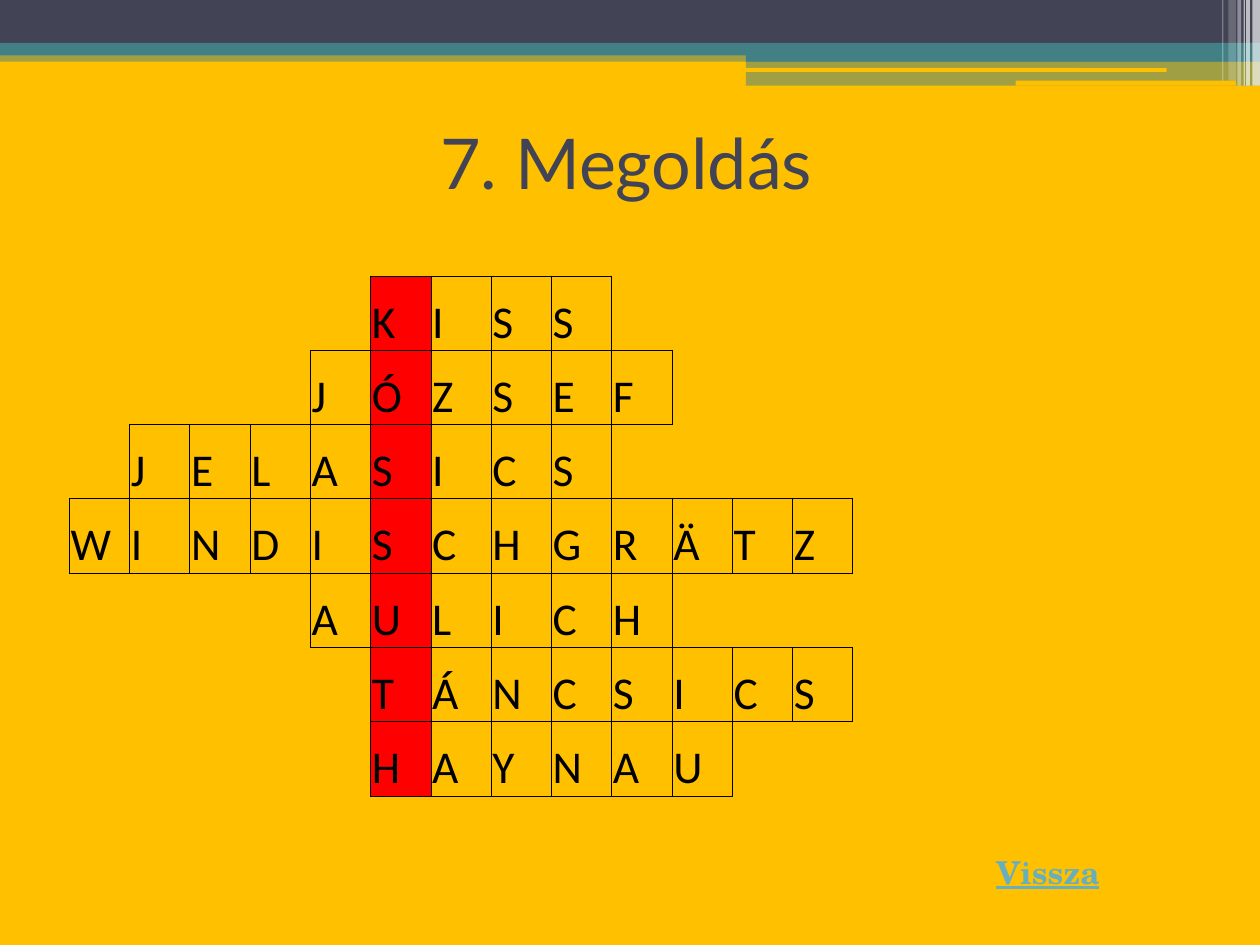
from dataclasses import dataclass
from typing import Optional

from lxml import etree
from pptx import Presentation
from pptx import util as u
from pptx.dml.color import RGBColor
from pptx.enum import shapes, text
from pptx.oxml import ns


@dataclass(frozen=True)
class Theme:
    background: str = "FFC000"
    dark: str = "424456"
    teal: str = "438086"
    white: str = "FFFFFF"
    black: str = "000000"
    solution: str = "FF0000"
    link: str = "67AFBD"
    title_font: str = "Lato"
    letter_font: str = "Calibri"
    link_font: str = "TeX Gyre Schola"
    title_size: int = 40
    letter_size: int = 26
    link_size: int = 18
    grid_line: float = 0.5
    link_outline: float = 1.4


THEME = Theme()


@dataclass(frozen=True)
class Bar:
    left: float
    top: float
    width: float
    height: float
    color: str
    opacity: int = 100
    rounded: bool = False


@dataclass(frozen=True)
class Word:
    start: int
    letters: str


@dataclass(frozen=True)
class Style:
    font: str
    size: int
    color: str
    bold: Optional[bool] = None
    underline: Optional[bool] = None


BARS = [
    Bar(0, 0.4, 10, 0.09, THEME.teal, 50),
    Bar(0, 0, 10, 0.34, THEME.dark),
    Bar(0, 0.34, 10, 0.1, THEME.teal),
    Bar(5.92, 0.39, 4.08, 0.1, THEME.teal),
    Bar(5.92, 0.48, 4.08, 0.2, THEME.teal, 50),
    Bar(5.91, 0.54, 3.35, 0.03, THEME.background, rounded=True),
    Bar(8.06, 0.64, 1.75, 0.04, THEME.background, rounded=True),
    Bar(9.94, 0, 0.06, 0.68, THEME.white, 65),
    Bar(9.89, 0, 0.03, 0.68, THEME.white, 65),
    Bar(9.87, 0, 0.01, 0.68, THEME.white, 60),
    Bar(9.82, 0, 0.03, 0.68, THEME.white, 40),
    Bar(9.75, 0, 0.06, 0.64, THEME.white, 20),
    Bar(9.7, 0, 0.01, 0.64, THEME.white, 30),
]

WORDS = [
    Word(5, "KISS"),
    Word(4, "JÓZSEF"),
    Word(1, "JELASICS"),
    Word(0, "WINDISCHGRÄTZ"),
    Word(4, "AULICH"),
    Word(5, "TÁNCSICS"),
    Word(5, "HAYNAU"),
]
COLUMNS = 13
SOLUTION_COLUMN = 5
SIDES = {"a:lnL": (0, -1), "a:lnR": (0, 1), "a:lnT": (-1, 0), "a:lnB": (1, 0)}

TITLE_STYLE = Style(THEME.title_font, THEME.title_size, THEME.dark)
LETTER_STYLE = Style(THEME.letter_font, THEME.letter_size, THEME.black)
LINK_STYLE = Style(THEME.link_font, THEME.link_size, THEME.link, True, True)


def add_bar(slide, bar: Bar) -> None:
    kind = shapes.MSO_SHAPE.ROUNDED_RECTANGLE if bar.rounded else shapes.MSO_SHAPE.RECTANGLE
    shape = slide.shapes.add_shape(
        kind, u.Inches(bar.left), u.Inches(bar.top), u.Inches(bar.width), u.Inches(bar.height)
    )
    shape.shadow.inherit = False
    shape.line.fill.background()
    shape.fill.solid()
    shape.fill.fore_color.rgb = RGBColor.from_string(bar.color)
    if bar.opacity < 100:
        color = shape.element.spPr.find(ns.qn("a:solidFill"))[0]
        etree.SubElement(color, ns.qn("a:alpha"), val=str(bar.opacity * 1000))


def add_run(paragraph, wording: str, style: Style):
    run = paragraph.add_run()
    run.text = wording
    run.font.name = style.font
    run.font.size = u.Pt(style.size)
    run.font.bold = style.bold
    run.font.underline = style.underline
    run.font.color.rgb = RGBColor.from_string(style.color)
    return run


def make_line(tag: str, width: float, color: Optional[str]):
    line = etree.Element(ns.qn(tag), w=str(u.Pt(width)))
    if color is None:
        etree.SubElement(line, ns.qn("a:noFill"))
    else:
        fill = etree.SubElement(line, ns.qn("a:solidFill"))
        etree.SubElement(fill, ns.qn("a:srgbClr"), val=color)
    return line


def add_title(slide) -> None:
    box = slide.shapes.add_textbox(u.Inches(0.47), u.Inches(0.7), u.Inches(9), u.Inches(1.17))
    frame = box.text_frame
    frame.word_wrap = True
    frame.vertical_anchor = text.MSO_ANCHOR.MIDDLE
    paragraph = frame.paragraphs[0]
    paragraph.alignment = text.PP_ALIGN.CENTER
    add_run(paragraph, "7. Megoldás", TITLE_STYLE)


def add_back_label(slide) -> None:
    box = slide.shapes.add_textbox(u.Inches(7.81), u.Inches(6.72), u.Inches(1.03), u.Inches(0.4))
    frame = box.text_frame
    frame.word_wrap = False
    frame.auto_size = text.MSO_AUTO_SIZE.SHAPE_TO_FIT_TEXT
    run = add_run(frame.paragraphs[0], "Vissza", LINK_STYLE)
    outline = make_line("a:ln", THEME.link_outline, THEME.white)
    run.font.fill
    run._r.get_or_add_rPr().insert(0, outline)


def letter_at(row: int, column: int) -> str:
    if not 0 <= row < len(WORDS):
        return ""
    word = WORDS[row]
    index = column - word.start
    return word.letters[index] if 0 <= index < len(word.letters) else ""


def fill_cell(cell, row: int, column: int) -> None:
    letter = letter_at(row, column)
    if letter and column == SOLUTION_COLUMN:
        cell.fill.solid()
        cell.fill.fore_color.rgb = RGBColor.from_string(THEME.solution)
    else:
        cell.fill.background()
    if letter:
        cell.vertical_anchor = text.MSO_ANCHOR.BOTTOM
        cell.margin_left = cell.margin_right = cell.margin_top = u.Inches(0.01)
        cell.margin_bottom = 0
        add_run(cell.text_frame.paragraphs[0], letter, LETTER_STYLE)
    properties = cell._tc.get_or_add_tcPr()
    for position, (tag, (down, across)) in enumerate(SIDES.items()):
        bordered = letter or letter_at(row + down, column + across)
        line = make_line(tag, THEME.grid_line, THEME.black if bordered else None)
        properties.insert(position, line)


def add_crossword(slide) -> None:
    table = slide.shapes.add_table(
        len(WORDS), COLUMNS, u.Inches(0.55), u.Inches(2.19), u.Inches(6.22), u.Inches(4.13)
    ).table
    table.first_row = table.horz_banding = False
    for column in table.columns:
        column.width = u.Inches(6.22 / COLUMNS)
    for row in range(len(WORDS)):
        table.rows[row].height = u.Inches(4.13 / len(WORDS))
        for column in range(COLUMNS):
            fill_cell(table.cell(row, column), row, column)


def main() -> None:
    presentation = Presentation()
    presentation.slide_width = u.Inches(10)
    presentation.slide_height = u.Inches(7.5)
    slide = presentation.slides.add_slide(presentation.slide_layouts[6])
    slide.background.fill.solid()
    slide.background.fill.fore_color.rgb = RGBColor.from_string(THEME.background)
    for bar in BARS:
        add_bar(slide, bar)
    add_title(slide)
    add_back_label(slide)
    add_crossword(slide)
    presentation.save("out.pptx")


if __name__ == "__main__":
    main()
